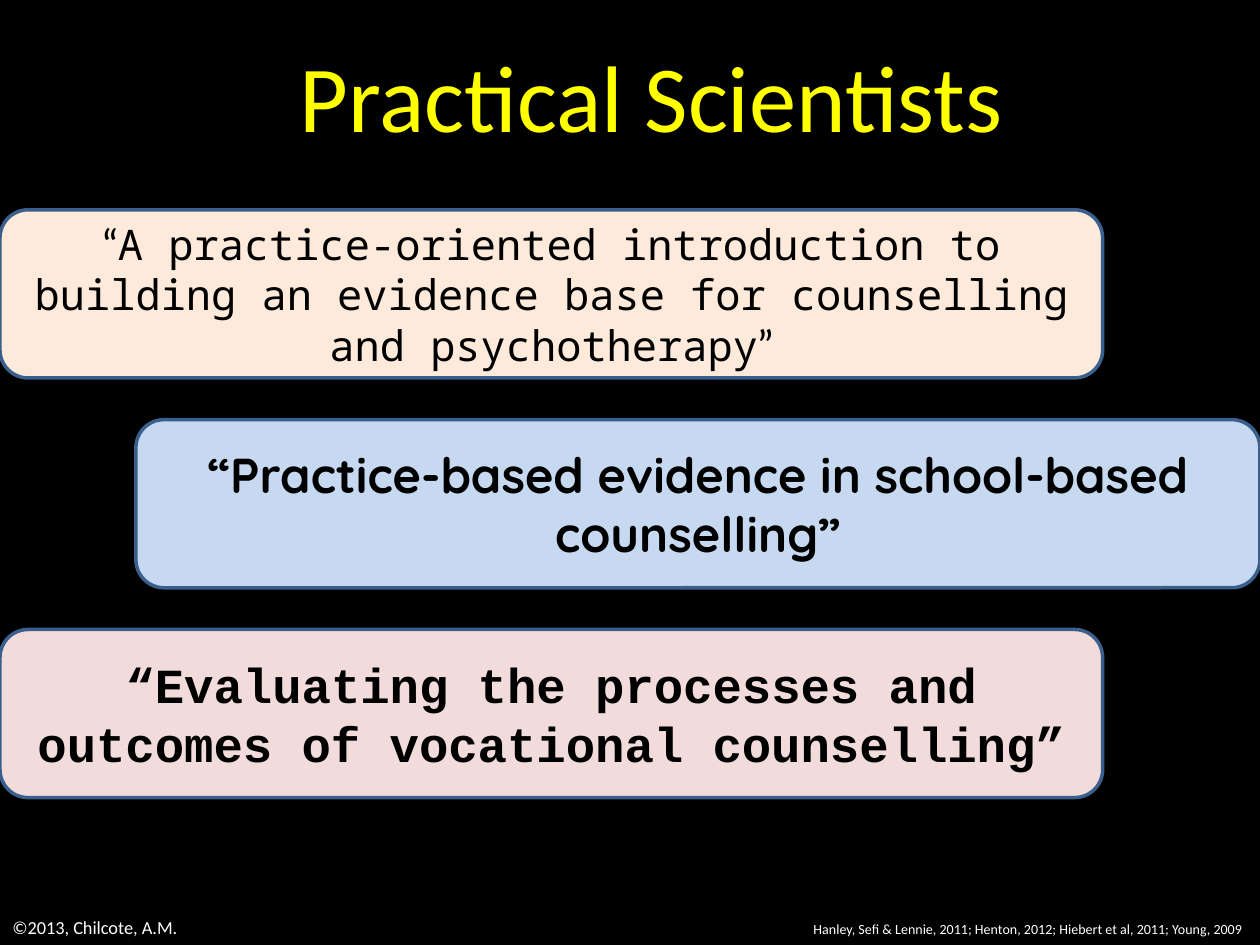
import pptx
import pptx.util
import pptx.dml.color
import pptx.enum.shapes
import pptx.enum.text
from pptx.util import Cm, Pt

ANCHOR = pptx.enum.text.MSO_ANCHOR
ALIGN = pptx.enum.text.PP_ALIGN

WIDTH, HEIGHT = 25.4, 19.05
PITCH, PANEL_HEIGHT = 4.23, 3.39
BORDER = "3A5F8C"

TITLE = "Practical Scientists"
COPYRIGHT = "©2013, Chilcote, A.M."
SOURCES = "Hanley, Sefi & Lennie, 2011; Henton, 2012; Hiebert et al, 2011; Young, 2009"

QUOTES = [
    {"left": 0, "width": 22.23, "fill": "FDEADA", "size": 24, "bold": False, "runs": [
        ("“", "Lato"),
        ("A practice-oriented introduction to building an evidence base "
         "for counselling and psychotherapy", "Noto Sans Mono"),
        ("”", "Lato")]},
    {"left": 2.74, "width": 22.66, "fill": "C6D9F1", "size": 28, "bold": True, "runs": [
        ("“Practice-based evidence in school-based counselling”", "Quicksand")]},
    {"left": 0, "width": 22.23, "fill": "F2DCDB", "size": 28, "bold": True, "runs": [
        ("“Evaluating the processes and outcomes of vocational counselling”", "Courier New")]},
]


def color(value):
    return pptx.dml.color.RGBColor.from_string(value)


def write(shape, runs, size, ink, bold=False, align=ALIGN.CENTER, anchor=ANCHOR.MIDDLE, wrap=True):
    frame = shape.text_frame
    frame.word_wrap = wrap
    frame.vertical_anchor = anchor
    para = frame.paragraphs[0]
    para.alignment = align
    for text, font in runs:
        span = para.add_run()
        span.text = text
        span.font.name = font
        span.font.size = Pt(size)
        span.font.bold = bold
        span.font.color.rgb = color(ink)


def add_text(page, text, left, top, width, height, size, ink, **layout):
    box = page.shapes.add_textbox(Cm(left), Cm(top), Cm(width), Cm(height))
    write(box, [(text, "Calibri")], size, ink, **layout)
    return box


def add_footer(page, text, left, width, height, size):
    box = add_text(page, text, left, HEIGHT - height, width, height, size, "FFFFFF",
                   align=ALIGN.LEFT, anchor=ANCHOR.TOP, wrap=False)
    box.text_frame.auto_size = pptx.enum.text.MSO_AUTO_SIZE.SHAPE_TO_FIT_TEXT


def add_quote(page, quote, top):
    panel = page.shapes.add_shape(
        pptx.enum.shapes.MSO_SHAPE.ROUNDED_RECTANGLE,
        Cm(quote["left"]), Cm(top), Cm(quote["width"]), Cm(PANEL_HEIGHT))
    panel.shadow.inherit = False
    panel.fill.solid()
    panel.fill.fore_color.rgb = color(quote["fill"])
    panel.line.color.rgb = color(BORDER)
    panel.line.width = Pt(2)
    write(panel, quote["runs"], quote["size"], "000000", quote["bold"])


def main():
    deck = pptx.Presentation()
    deck.slide_width, deck.slide_height = Cm(WIDTH), Cm(HEIGHT)
    page = deck.slides.add_slide(deck.slide_layouts[6])
    page.background.fill.solid()
    page.background.fill.fore_color.rgb = color("000000")

    add_footer(page, COPYRIGHT, 0, 3.99, 0.71, 10.5)
    add_text(page, TITLE, 0.43, 0.64, WIDTH, 2.54, 54, "FFFF00")
    for row, quote in enumerate(QUOTES, start=1):
        add_quote(page, quote, row * PITCH)
    add_footer(page, SOURCES, WIDTH - 9.25, 9.25, 0.61, 8)

    deck.save("out.pptx")


if __name__ == "__main__":
    main()
